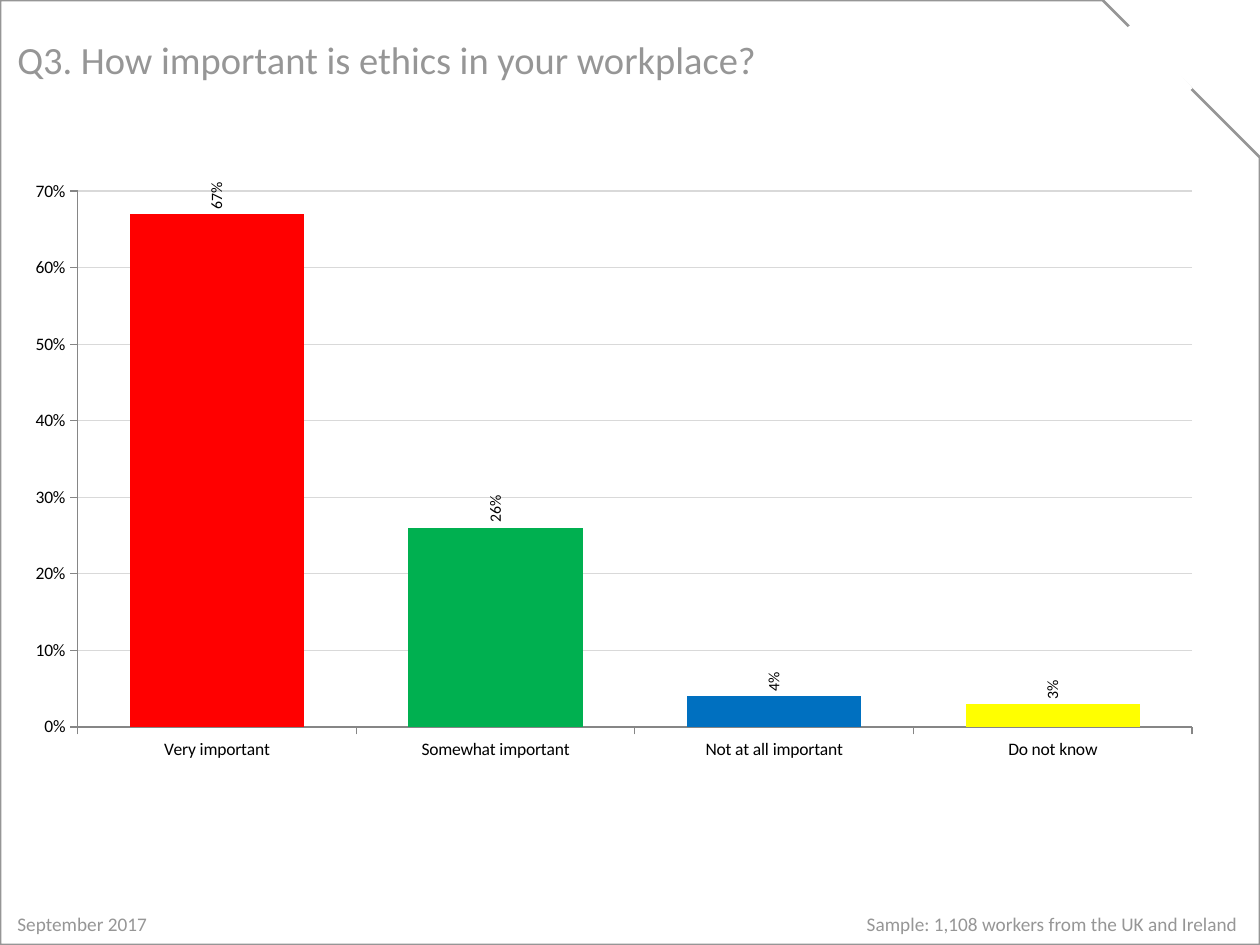
from lxml import etree
from pptx import Presentation
from pptx.chart.data import CategoryChartData
from pptx.dml.color import RGBColor
from pptx.enum.chart import XL_CHART_TYPE, XL_LABEL_POSITION, XL_TICK_MARK
from pptx.enum.shapes import MSO_CONNECTOR, MSO_SHAPE
from pptx.enum.text import MSO_ANCHOR
from pptx.oxml import parse_xml
from pptx.oxml.ns import nsdecls, qn
from pptx.util import Cm, Pt

FONT = "Calibri"
GREY = RGBColor(0x96, 0x96, 0x96)
GRID_GREY = RGBColor(0xD9, 0xD9, 0xD9)
AXIS_GREY = RGBColor(0x86, 0x86, 0x86)
WHITE = RGBColor(0xFF, 0xFF, 0xFF)
BLACK = RGBColor(0x00, 0x00, 0x00)
RED = RGBColor(0xFF, 0x00, 0x00)
GREEN = RGBColor(0x00, 0xB0, 0x50)
BLUE = RGBColor(0x00, 0x70, 0xC0)
YELLOW = RGBColor(0xFF, 0xFF, 0x00)

ANSWERS = [
    ("Very important", 0.67, RED),
    ("Somewhat important", 0.26, GREEN),
    ("Not at all important", 0.04, BLUE),
    ("Do not know", 0.03, YELLOW),
]


def set_font(font, size, color):
    font.name = FONT
    font.size = Pt(size)
    font.color.rgb = color


def add_text(slide, left, top, width, height, text, size):
    """Add a one-paragraph grey text box and return its paragraph."""
    box = slide.shapes.add_textbox(Cm(left), Cm(top), Cm(width), Cm(height))
    tf = box.text_frame
    tf.word_wrap = True
    tf.vertical_anchor = MSO_ANCHOR.MIDDLE
    p = tf.paragraphs[0]
    r = p.add_run()
    r.text = text
    set_font(r.font, size, GREY)
    return p


prs = Presentation()
prs.slide_width = Cm(25.4)
prs.slide_height = Cm(19.05)
s = prs.slides.add_slide(prs.slide_layouts[6])

# Footer: date on the left, sample size at a right tab
p = add_text(s, 0.1, 18.26, 25.25, 0.74,
             "September 2017\tSample: 1,108 workers from the UK and Ireland", 11)
tabs = etree.SubElement(p._p.get_or_add_pPr(), qn("a:tabLst"))
etree.SubElement(tabs, qn("a:tab"), pos=str(Cm(24.6)), algn="r")

# Frame with a snipped corner, its diagonal broken by a white line
frame = s.shapes.add_shape(MSO_SHAPE.SNIP_1_RECTANGLE, 0, 0, prs.slide_width, prs.slide_height)
frame.shadow.inherit = False
frame.fill.background()
frame.line.color.rgb = GREY
frame.line.width = Pt(1.5)

corner_gap = s.shapes.add_connector(MSO_CONNECTOR.STRAIGHT, Cm(22.78), Cm(0.51), Cm(23.98), Cm(1.83))
corner_gap.line.color.rgb = WHITE
corner_gap.line.width = Pt(4.5)
etree.SubElement(corner_gap._element.spPr, qn("a:effectLst"))

# Title
p = add_text(s, 0.1, 0.41, 22.38, 1.7, "Q3. How important is ethics in your workplace?", 22)
p.line_spacing = 0.9

# Chart
data = CategoryChartData(number_format="0%")
data.categories = [answer for answer, _, _ in ANSWERS]
data.add_series("Series 1", [share for _, share, _ in ANSWERS])
chart = s.shapes.add_chart(XL_CHART_TYPE.COLUMN_CLUSTERED, Cm(0.69), Cm(3.5),
                           Cm(23.65), Cm(13.64), data).chart
chart.has_legend = False
chart.has_title = False
set_font(chart.font, 10, BLACK)

plot = chart.plots[0]
plot.gap_width = 60
plot.vary_by_categories = False
series = plot.series[0]
series.invert_if_negative = False
for i, (_, _, color) in enumerate(ANSWERS):
    fill = series.points[i].format.fill
    fill.solid()
    fill.fore_color.rgb = color

labels = series.data_labels
labels.show_value = True
labels.position = XL_LABEL_POSITION.OUTSIDE_END
labels.number_format = "0%"
labels.number_format_is_linked = False
set_font(labels.font, 9, BLACK)
body = labels._element.find(".//" + qn("a:bodyPr"))
body.set("rot", "-5400000")
body.set("vert", "horz")

for axis in (chart.category_axis, chart.value_axis):
    axis.major_tick_mark = XL_TICK_MARK.OUTSIDE
    axis.minor_tick_mark = XL_TICK_MARK.NONE
    axis.format.line.color.rgb = AXIS_GREY
    axis.format.line.width = Pt(0.75)
    set_font(axis.tick_labels.font, 10, BLACK)

shares = chart.value_axis
shares.minimum_scale = 0
shares.maximum_scale = 0.7
shares.major_unit = 0.1
shares.tick_labels.number_format = "0%"
shares.tick_labels.number_format_is_linked = False
shares.has_major_gridlines = True
shares.major_gridlines.format.line.color.rgb = GRID_GREY
shares.major_gridlines.format.line.width = Pt(0.75)

# Fixed inner plot area, as fractions of the chart
plot_area = chart._chartSpace.chart.plotArea
for old in plot_area.findall(qn("c:layout")):
    plot_area.remove(old)
plot_area.insert(0, parse_xml(
    f'<c:layout {nsdecls("c")}><c:manualLayout><c:layoutTarget val="inner"/>'
    '<c:xMode val="edge"/><c:yMode val="edge"/><c:x val="0.037"/><c:y val="0.026"/>'
    '<c:w val="0.95"/><c:h val="0.792"/></c:manualLayout></c:layout>'))

prs.save("out.pptx")
